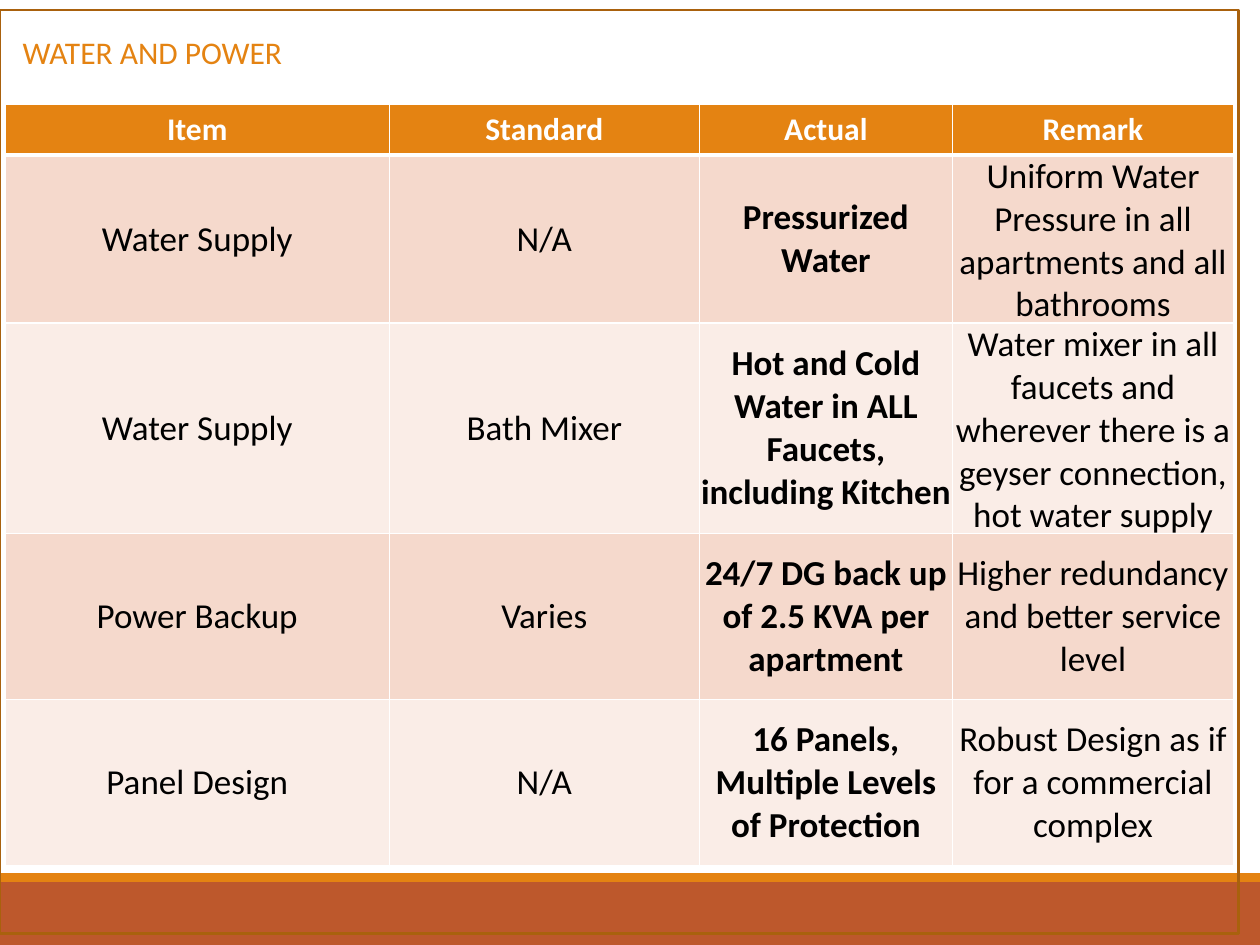
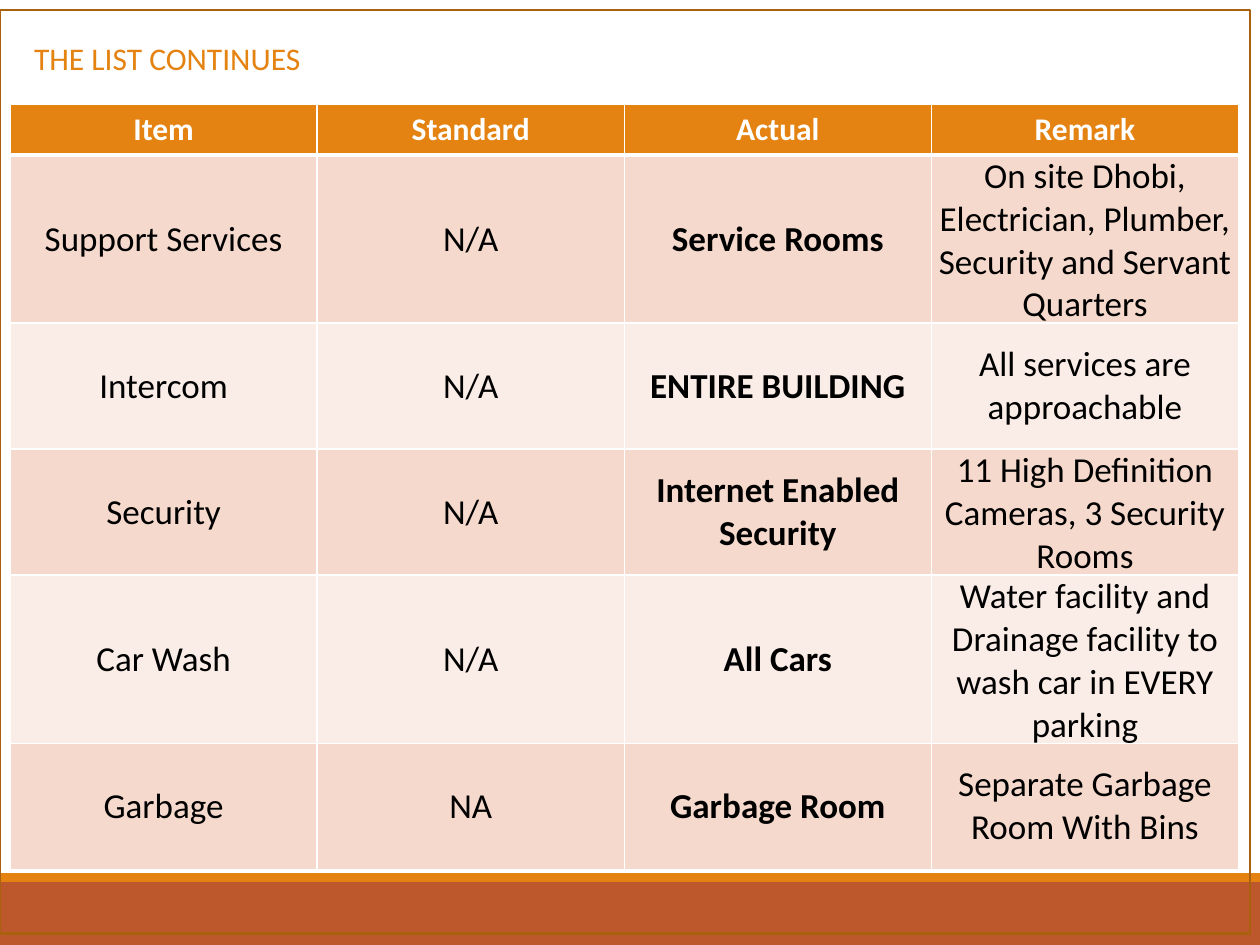
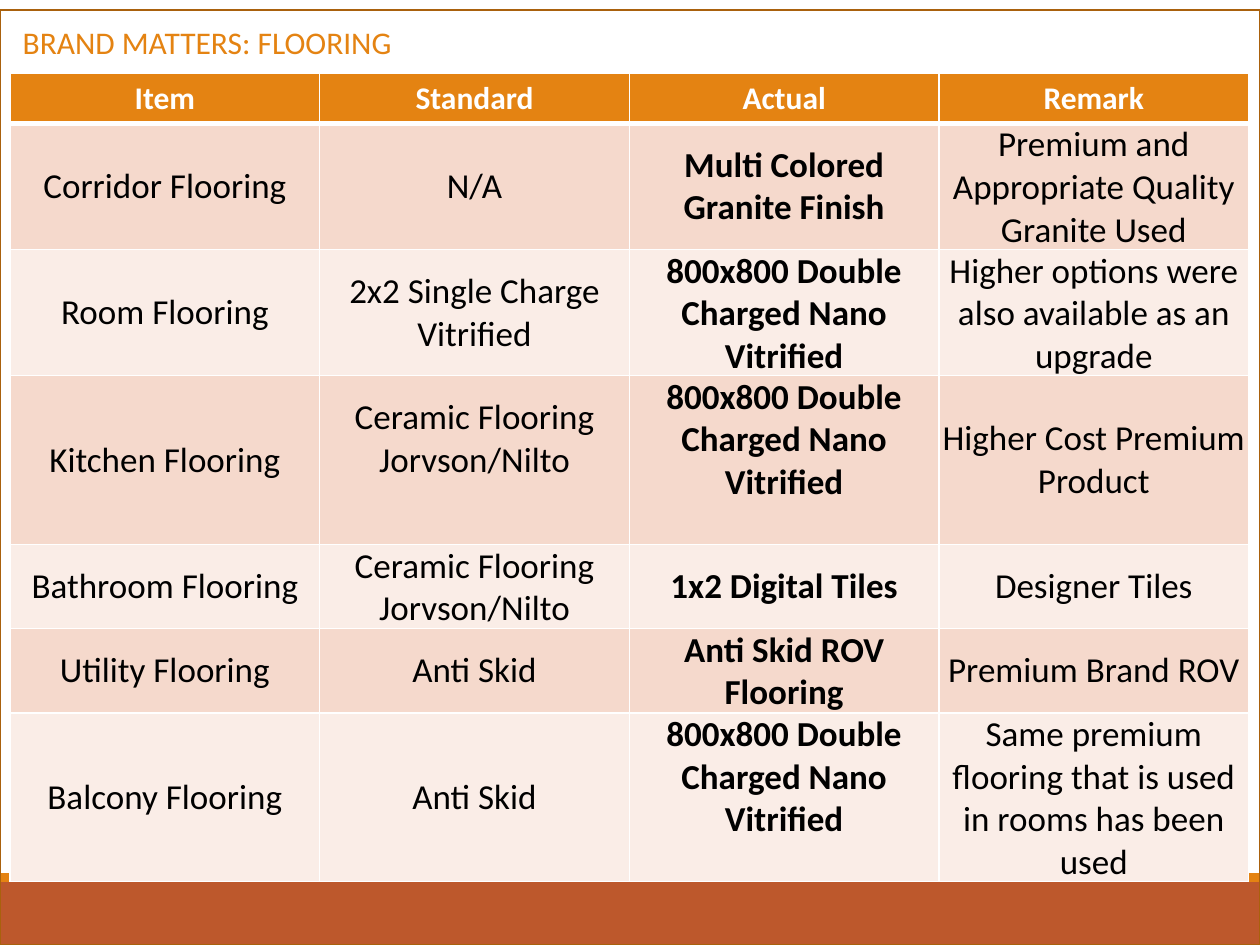
"""Build three specification tables in one shared slide style."""
from lxml import etree
from pptx import Presentation
from pptx.dml.color import RGBColor
from pptx.enum.shapes import MSO_SHAPE
from pptx.enum.text import MSO_ANCHOR, MSO_AUTO_SIZE, PP_ALIGN
from pptx.oxml.ns import qn
from pptx.util import Inches, Pt

RECTANGLE = MSO_SHAPE.RECTANGLE
TOP, MIDDLE = MSO_ANCHOR.TOP, MSO_ANCHOR.MIDDLE
LEFT, CENTER = PP_ALIGN.LEFT, PP_ALIGN.CENTER
FIT_SHAPE = MSO_AUTO_SIZE.SHAPE_TO_FIT_TEXT

FONT = "Calibri"
COLORS = {
    "accent": "E48312",
    "footer": "BD582C",
    "frame": "A9610D",
    "odd": "F5D9CC",
    "even": "FAEDE7",
    "white": "FFFFFF",
    "black": "000000",
}
BANDS = [("footer", 7, 0.5), ("accent", 6.93, 0.07)]
HEADERS = ("Item", "Standard", "Actual", "Remark")
BOLD_COLUMN = HEADERS.index("Actual")
LINE_HEIGHT = 0.34

SLIDES = [
    {
        "title": "WATER AND POWER",
        "title_at": (0.08, 0.21, 2.28, 0.4),
        "frame_size": (9.83, 7.33),
        "table_at": (0.04, 0.83),
        "columns": [3.05, 2.46, 2.01, 2.23],
        "heights": [0.38, 1.25, 1.57, 1.32, 1.32],
        "rows": [
            ("Water Supply", "N/A", "Pressurized Water",
             "Uniform Water Pressure in all apartments and all bathrooms"),
            ("Water Supply", "Bath Mixer",
             "Hot and Cold Water in ALL Faucets, including Kitchen",
             "Water mixer in all faucets and wherever there is a geyser "
             "connection, hot water supply"),
            ("Power Backup", "Varies", "24/7 DG back up of 2.5 KVA per apartment",
             "Higher redundancy and better service level"),
            ("Panel Design", "N/A", "16 Panels, Multiple Levels of Protection",
             "Robust Design as if for a commercial complex"),
        ],
        "raised": [],
    },
    {
        "title": "THE LIST CONTINUES",
        "title_at": (0.17, 0.26, 2.34, 0.4),
        "frame_size": (9.92, 7.33),
        "table_at": (0.08, 0.83),
        "columns": [9.75 / 4] * 4,
        "heights": [0.39, 1.3, 1, 1, 1.3, 1],
        "rows": [
            ("Support Services", "N/A", "Service Rooms",
             "On site Dhobi, Electrician, Plumber, Security and Servant Quarters"),
            ("Intercom", "N/A", "ENTIRE BUILDING", "All services are approachable"),
            ("Security", "N/A", "Internet Enabled Security",
             "11 High Definition Cameras, 3 Security Rooms"),
            ("Car Wash", "N/A", "All Cars",
             "Water facility and Drainage facility to wash car in EVERY parking"),
            ("Garbage", "NA", "Garbage Room", "Separate Garbage Room With Bins"),
        ],
        "raised": [],
    },
    {
        "title": "BRAND MATTERS: FLOORING",
        "title_at": (0.08, 0.13, 3.16, 0.4),
        "frame_size": (10, 7.42),
        "table_at": (0.08, 0.58),
        "columns": [9.83 / 4] * 4,
        "heights": [0.38, 1, 0.96, 1.28, 0.64, 0.64, 1.28],
        "rows": [
            ("Corridor Flooring", "N/A", "Multi Colored Granite Finish",
             "Premium and Appropriate Quality Granite Used"),
            ("Room Flooring", "2x2 Single Charge Vitrified",
             "800x800 Double Charged Nano Vitrified",
             "Higher options were also available as an upgrade"),
            ("Kitchen Flooring", "Ceramic Flooring Jorvson/Nilto",
             "800x800 Double Charged Nano Vitrified",
             "Higher Cost Premium Product"),
            ("Bathroom Flooring", "Ceramic Flooring Jorvson/Nilto",
             "1x2 Digital Tiles", "Designer Tiles"),
            ("Utility Flooring", "Anti Skid", "Anti Skid ROV Flooring",
             "Premium Brand ROV"),
            ("Balcony Flooring", "Anti Skid",
             "800x800 Double Charged Nano Vitrified",
             "Same premium flooring that is used in rooms has been used"),
        ],
        "raised": [(3, 1), (3, 2), (6, 2)],
    },
]


def color(name):
    return RGBColor.from_string(COLORS[name])


def write(frame, text, size, ink, bold, align):
    para = frame.paragraphs[0]
    para.alignment = align
    span = para.add_run()
    span.text = text
    span.font.name = FONT
    span.font.size = Pt(size)
    span.font.bold = bold
    span.font.color.rgb = color(ink)


def add_rectangle(page, left, top, width, height, fill=None, line=None):
    box = page.shapes.add_shape(RECTANGLE, *map(Inches, (left, top, width, height)))
    box.shadow.inherit = False
    if fill:
        box.fill.solid()
        box.fill.fore_color.rgb = color(fill)
    else:
        box.fill.background()
    if line:
        box.line.color.rgb = color(line)
        box.line.width = Pt(1.25)
    else:
        box.line.fill.background()


def set_title(page, text, place):
    box = page.shapes.title
    box.left, box.top, box.width, box.height = map(Inches, place)
    frame = box.text_frame
    frame.word_wrap = False
    frame.auto_size = FIT_SHAPE
    frame.vertical_anchor = TOP
    write(frame, text, 18, "accent", False, LEFT)


def set_borders(cell, row):
    widths = {"L": 1, "R": 1, "T": 3 if row == 1 else 1, "B": 3 if row == 0 else 1}
    properties = cell._tc.get_or_add_tcPr()
    for side, width in widths.items():
        line = etree.SubElement(properties, qn(f"a:ln{side}"), w=str(Pt(width)))
        fill = etree.SubElement(line, qn("a:solidFill"))
        etree.SubElement(fill, qn("a:srgbClr"), val=COLORS["white"])


def format_cell(cell, text, row, column, raised):
    set_borders(cell, row)
    cell.vertical_anchor = MIDDLE
    cell.fill.solid()
    if row == 0:
        cell.fill.fore_color.rgb = color("accent")
        write(cell.text_frame, text, 18, "white", True, CENTER)
        return
    cell.fill.fore_color.rgb = color("odd" if row % 2 else "even")
    cell.margin_left = cell.margin_right = cell.margin_top = 0
    cell.margin_bottom = Inches(LINE_HEIGHT if raised else 0)
    write(cell.text_frame, text, 20, "black", column == BOLD_COLUMN, CENTER)


def add_specification(page, content):
    rows = [HEADERS] + content["rows"]
    columns, heights = content["columns"], content["heights"]
    size = (sum(columns), sum(heights))
    table = page.shapes.add_table(
        len(rows), len(columns), *map(Inches, content["table_at"] + size)).table
    for column, width in zip(table.columns, columns):
        column.width = Inches(width)
    for row, height in zip(table.rows, heights):
        row.height = Inches(height)
    for r, texts in enumerate(rows):
        for c, text in enumerate(texts):
            format_cell(table.cell(r, c), text, r, c, (r, c) in content["raised"])


def main():
    deck = Presentation()
    deck.slide_width, deck.slide_height = Inches(10), Inches(7.5)
    title_only = deck.slide_layouts.get_by_name("Title Only")
    for content in SLIDES:
        page = deck.slides.add_slide(title_only)
        set_title(page, content["title"], content["title_at"])
        for fill, top, height in BANDS:
            add_rectangle(page, 0, top, 10, height, fill=fill)
        add_specification(page, content)
        add_rectangle(page, 0, 0.08, *content["frame_size"], line="frame")
    deck.save("out.pptx")


if __name__ == "__main__":
    main()
